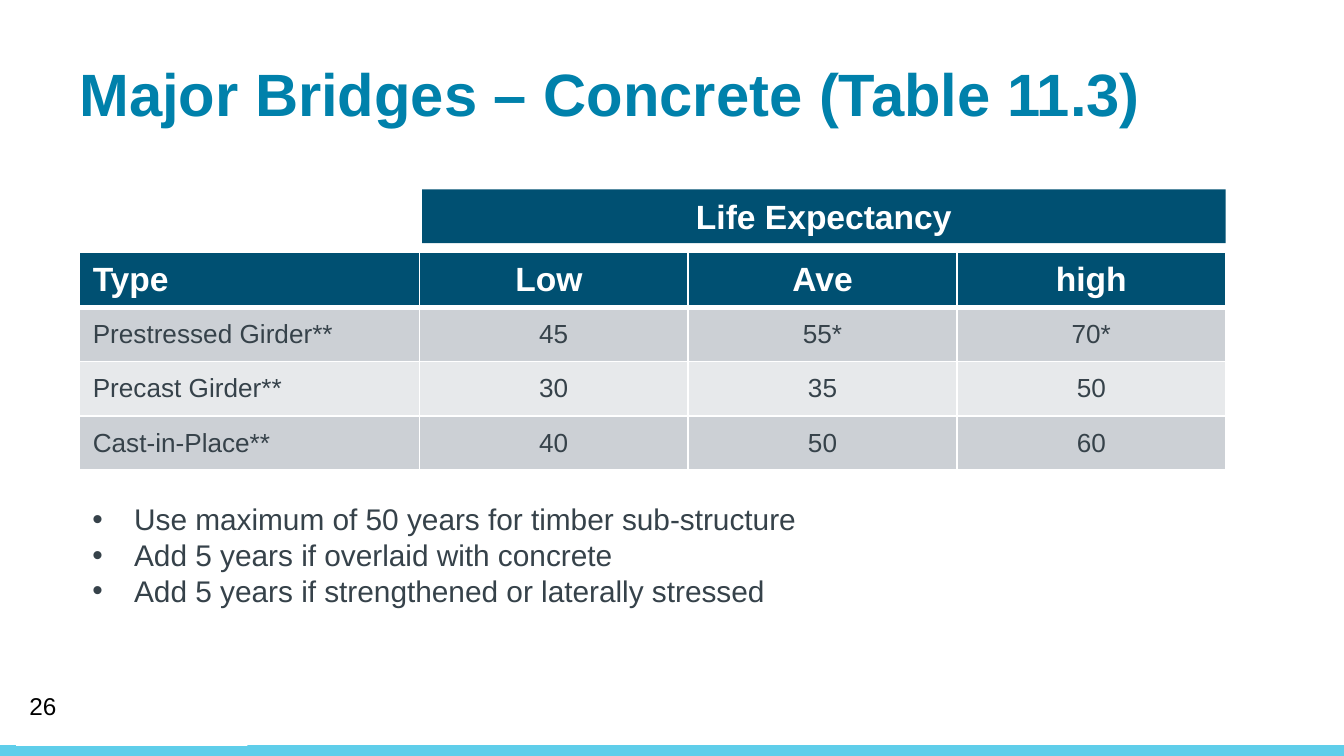
from dataclasses import dataclass

from lxml.etree import SubElement
from pptx import Presentation
from pptx.dml.color import RGBColor
from pptx.enum.shapes import MSO_SHAPE as Shape
from pptx.enum.text import MSO_ANCHOR as Anchor, PP_ALIGN as Align
from pptx.oxml.ns import qn
from pptx.util import Emu, Pt

PX = 914400 // 200  # 200 px to the inch

COLORS = {
    "white": "FFFFFF",
    "black": "000000",
    "title": "0081AB",
    "header": "005072",
    "body": "36424A",
    "band_dark": "CCD0D5",
    "band_light": "E7E9EB",
    "footer": "5FCEEA",
}


@dataclass(frozen=True)
class Box:
    left: int
    top: int
    width: int
    height: int

    def emu(self) -> tuple[Emu, ...]:
        return tuple(Emu(v * PX) for v in (self.left, self.top, self.width, self.height))


@dataclass(frozen=True)
class Style:
    size: int
    color: str
    bold: bool = False
    align: Align = Align.LEFT


TITLE = Style(32, "title", bold=True)
HEADER = Style(18, "white", bold=True)
HEADER_CENTER = Style(18, "white", bold=True, align=Align.CENTER)
CELL = Style(14, "body")
CELL_CENTER = Style(14, "body", align=Align.CENTER)
NOTE = Style(16, "body")
PAGE_NUMBER = Style(13, "black")

TABLE_BOX = Box(118, 376, 1706, 324)
COLUMN_WIDTHS = (506, 400, 400, 400)
ROWS = (
    ("Type", "Low ", "Ave", "high"),
    ("Prestressed Girder**", "45", "55*", "70*"),
    ("Precast Girder**", "30", "35", "50"),
    ("Cast-in-Place**", "40", "50", "60"),
)
NOTES = (
    "Use maximum of 50 years for timber sub-structure",
    "Add 5 years if overlaid with concrete",
    "Add 5 years if strengthened or laterally stressed",
)
NOTE_INDENT = 62


def rgb(name: str) -> RGBColor:
    return RGBColor.from_string(COLORS[name])


def format_text(text_frame, style: Style) -> None:
    for paragraph in text_frame.paragraphs:
        paragraph.alignment = style.align
        for run in paragraph.runs:
            run.font.name = "Arial"
            run.font.size = Pt(style.size)
            run.font.bold = style.bold
            run.font.color.rgb = rgb(style.color)


def add_rectangle(slide, box: Box, color: str):
    shape = slide.shapes.add_shape(Shape.RECTANGLE, *box.emu())
    shape.shadow.inherit = False
    shape.fill.solid()
    shape.fill.fore_color.rgb = rgb(color)
    shape.line.fill.background()
    return shape


def add_text(slide, box: Box, text: str, style: Style, anchor: Anchor = Anchor.TOP):
    text_frame = slide.shapes.add_textbox(*box.emu()).text_frame
    text_frame.word_wrap = True
    text_frame.vertical_anchor = anchor
    text_frame.text = text
    format_text(text_frame, style)
    return text_frame


def add_bullet(paragraph) -> None:
    properties = paragraph._p.get_or_add_pPr()
    properties.set("marL", str(NOTE_INDENT * PX))
    properties.set("indent", str(-NOTE_INDENT * PX))
    SubElement(properties, qn("a:buFont"), typeface="Arial")
    SubElement(properties, qn("a:buChar"), char="•")


def set_borders(cell, bottom_width: int) -> None:
    properties = cell._tc.get_or_add_tcPr()
    for side, width in (("L", 1), ("R", 1), ("T", 1), ("B", bottom_width)):
        line = SubElement(properties, qn(f"a:ln{side}"), w=str(Pt(width)))
        fill = SubElement(line, qn("a:solidFill"))
        SubElement(fill, qn("a:srgbClr"), val=COLORS["white"])


def add_life_table(slide) -> None:
    table = slide.shapes.add_table(len(ROWS), len(COLUMN_WIDTHS), *TABLE_BOX.emu()).table
    for column, width in zip(table.columns, COLUMN_WIDTHS):
        column.width = Emu(width * PX)
    for row_index, values in enumerate(ROWS):
        is_header = row_index == 0
        band = "header" if is_header else ("band_light", "band_dark")[row_index % 2]
        styles = (HEADER, HEADER_CENTER) if is_header else (CELL, CELL_CENTER)
        for column_index, value in enumerate(values):
            cell = table.cell(row_index, column_index)
            cell.vertical_anchor = Anchor.MIDDLE
            cell.text_frame.text = value
            format_text(cell.text_frame, styles[min(column_index, 1)])
            # The bottom of the header is the top of the first body row
            set_borders(cell, bottom_width=3 if is_header else 1)
            cell.fill.solid()
            cell.fill.fore_color.rgb = rgb(band)


def main() -> None:
    presentation = Presentation()
    presentation.slide_width = Emu(2000 * PX)
    presentation.slide_height = Emu(1125 * PX)
    slide = presentation.slides.add_slide(presentation.slide_layouts[6])

    # Footer strip
    add_rectangle(slide, Box(0, 1109, 2000, 16), "footer")
    add_rectangle(slide, Box(24, 1084, 344, 26), "white")

    # Table, with a heading over the three value columns
    add_life_table(slide)
    heading = add_rectangle(slide, Box(628, 282, 1196, 80), "header")
    heading.text_frame.text = "Life Expectancy"
    format_text(heading.text_frame, HEADER_CENTER)

    # Title and page number
    title = add_text(slide, Box(118, 74, 1798, 114), "Major Bridges – Concrete (Table 11.3)", TITLE)
    title.margin_left = 0
    add_text(slide, Box(24, 1020, 450, 60), "26", PAGE_NUMBER, Anchor.MIDDLE)

    # Bulleted notes
    notes = add_text(slide, Box(118, 736, 1706, 188), "\n".join(NOTES), NOTE)
    for paragraph in notes.paragraphs:
        add_bullet(paragraph)

    presentation.save("out.pptx")


if __name__ == "__main__":
    main()
